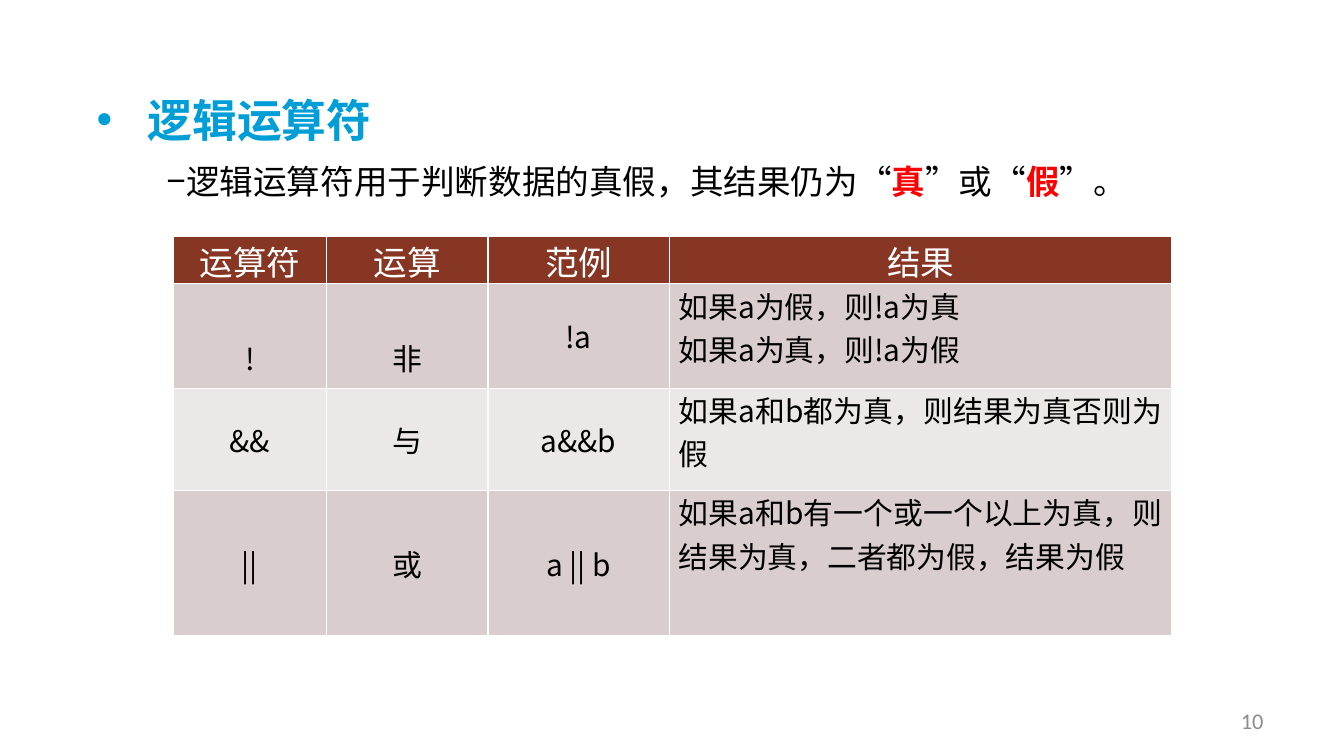
from typing import NamedTuple

from lxml import etree
from pptx import Presentation
from pptx.dml.color import RGBColor
from pptx.enum import text as t
from pptx.oxml import ns
from pptx.util import Inches, Pt

WHITE = RGBColor(0xFF, 0xFF, 0xFF)
BLACK = RGBColor(0, 0, 0)
BLUE = RGBColor(0x00, 0x9E, 0xD6)
RED = RGBColor(0xFF, 0, 0)
GREY = RGBColor(0x8C, 0x8C, 0x8C)
BROWN = RGBColor(0x87, 0x36, 0x24)
DARK_BAND = RGBColor(0xD9, 0xCE, 0xCD)
LIGHT_BAND = RGBColor(0xED, 0xE8, 0xE8)
LATIN, CJK, BULLET = "Calibri", "Noto Sans CJK SC", "Arial"


class Box(NamedTuple):
    left: float
    top: float
    width: float
    height: float

    def lengths(self) -> list:
        return [Inches(value) for value in self]


class Operator(NamedTuple):
    symbol: str
    operation: str
    example: str
    result: str
    spacing: float = 1.0  # line spacing of symbol and operation


OPERATORS = [
    Operator("!", "非", "!a", "如果a为假，则!a为真\n如果a为真，则!a为假", 2.0),
    Operator("&&", "与", "a&&b", "如果a和b都为真，则结果为真否则为假"),
    Operator("||", "或", "a || b",
             "如果a和b有一个或一个以上为真，则结果为真，二者都为假，结果为假"),
]
HEADINGS = ["运算符", "运算", "范例", "结果"]
COLUMN_WIDTHS = [1.14, 1.2, 1.35, 3.74]
ROW_HEIGHTS = [0.35, 0.78, 0.76, 1.08]


def set_font(font, size: float, color: RGBColor, name: str = LATIN, bold: bool = False) -> None:
    font.size, font.name, font.bold = Pt(size), name, bold
    font.color.rgb = color
    east_asian = etree.SubElement(font._element, ns.qn("a:ea"))
    east_asian.set("typeface", CJK)


def add_bullet(paragraph, char: str, margin: float = 0, indent: float = 0) -> None:
    props = paragraph._p.get_or_add_pPr()
    props.set("marL", str(Inches(margin)))
    props.set("indent", str(Inches(indent)))
    etree.SubElement(props, ns.qn("a:buFont")).set("typeface", BULLET)
    etree.SubElement(props, ns.qn("a:buChar")).set("char", char)


def add_paragraph_box(slide, box: Box, wrap: bool = True):
    frame = slide.shapes.add_textbox(*box.lengths()).text_frame
    frame.word_wrap = wrap
    return frame, frame.paragraphs[0]


def add_borders(cell) -> None:
    props = cell._tc.get_or_add_tcPr()
    for side in "LRTB":
        line = etree.SubElement(props, ns.qn(f"a:ln{side}"), w=str(Pt(1)))
        fill = etree.SubElement(line, ns.qn("a:solidFill"))
        etree.SubElement(fill, ns.qn("a:srgbClr"), val=str(WHITE))


def fill_cell(cell, content: str, fill: RGBColor, size: float, color: RGBColor,
              align: t.PP_ALIGN, anchor: t.MSO_ANCHOR, spacing: float = 1.0) -> None:
    add_borders(cell)
    cell.fill.solid()
    cell.fill.fore_color.rgb = fill
    cell.margin_left = cell.margin_right = Inches(0.07)
    cell.margin_top = cell.margin_bottom = 0
    cell.vertical_anchor = anchor
    cell.text = content
    for paragraph in cell.text_frame.paragraphs:
        paragraph.alignment = align
        paragraph.line_spacing = spacing
        set_font(paragraph.font, size, color, CJK)


def add_operator_table(slide) -> None:
    box = Box(1.29, 1.76, sum(COLUMN_WIDTHS), sum(ROW_HEIGHTS))
    table = slide.shapes.add_table(
        len(ROW_HEIGHTS), len(COLUMN_WIDTHS), *box.lengths()).table
    for column, width in zip(table.columns, COLUMN_WIDTHS):
        column.width = Inches(width)
    for row, height in zip(table.rows, ROW_HEIGHTS):
        row.height = Inches(height)

    center, middle, top = t.PP_ALIGN.CENTER, t.MSO_ANCHOR.MIDDLE, t.MSO_ANCHOR.TOP
    for col, heading in enumerate(HEADINGS):
        fill_cell(table.cell(0, col), heading, BROWN, 18, WHITE, center, top)
    for row, op in enumerate(OPERATORS, start=1):
        band = DARK_BAND if row % 2 else LIGHT_BAND
        for col, content in enumerate((op.symbol, op.operation, op.example)):
            fill_cell(table.cell(row, col), content, band, 16, BLACK, center, middle,
                      op.spacing if col < 2 else 1.0)
        fill_cell(table.cell(row, 3), op.result, band, 16, BLACK,
                  t.PP_ALIGN.JUSTIFY, top)


def main() -> None:
    prs = Presentation()
    prs.slide_width = Inches(10)
    prs.slide_height = prs.slide_width * 9 // 16
    slide = prs.slides.add_slide(prs.slide_layouts[6])

    # Topic
    frame, topic = add_paragraph_box(slide, Box(0.62, 0.44, 2.27, 0.71), wrap=False)
    frame.auto_size = t.MSO_AUTO_SIZE.SHAPE_TO_FIT_TEXT
    topic.line_spacing = 1.5
    topic.text = "逻辑运算符"
    add_bullet(topic, "•", 0.38, -0.38)
    set_font(topic.font, 24, BLUE, bold=True)

    # Operator table
    add_operator_table(slide)

    # Explanation with the truth values highlighted
    frame, explanation = add_paragraph_box(slide, Box(1.14, 1, 7.72, 0.56))
    frame.auto_size = t.MSO_AUTO_SIZE.SHAPE_TO_FIT_TEXT
    explanation.line_spacing = 1.5
    add_bullet(explanation, "−")
    pieces = ["逻辑运算符用于判断数据的真假，其结果仍为“", "真", "”或“", "假", "”。"]
    for piece in pieces:
        run = explanation.add_run()
        run.text = piece
        is_value = piece in ("真", "假")
        set_font(run.font, 18, RED if is_value else BLACK, bold=is_value)

    # Page number
    frame, page = add_paragraph_box(slide, Box(7.17, 5.21, 2.33, 0.3))
    frame.vertical_anchor = t.MSO_ANCHOR.MIDDLE
    page.text = "10"
    page.alignment = t.PP_ALIGN.RIGHT
    set_font(page.font, 12, GREY)

    prs.save("out.pptx")


if __name__ == "__main__":
    main()
